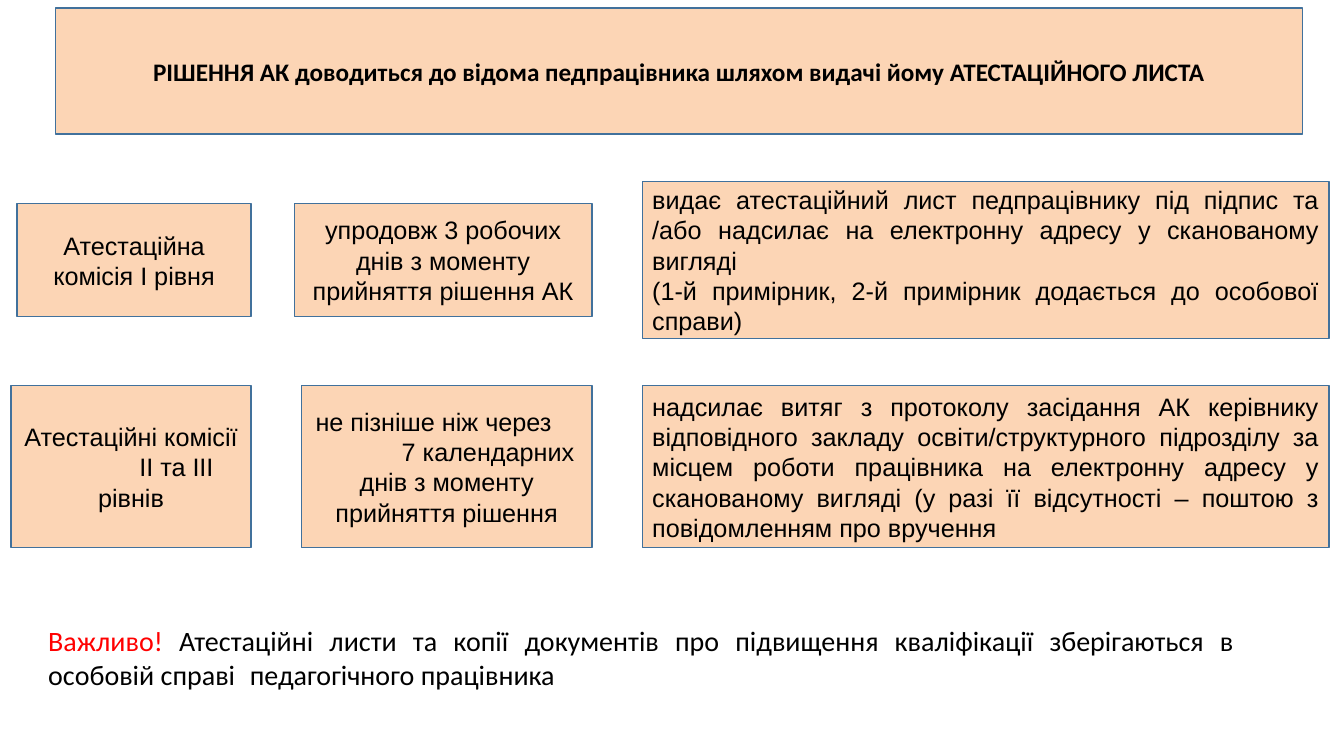
import pptx
import pptx.util
import pptx.dml.color
import pptx.enum.shapes
import pptx.enum.text

THEME = {
    "peach": "FCD5B5",
    "outline": "41719C",
    "white": "FFFFFF",
    "black": "000000",
    "red": "FF0000",
    "body_font": "Arial",
    "accent_font": "Calibri",
    "body_size": 18,
    "note_size": 20,
}
CENTER = pptx.enum.text.PP_ALIGN.CENTER
JUSTIFY = pptx.enum.text.PP_ALIGN.JUSTIFY

presentation = pptx.Presentation()
presentation.slide_width = pptx.util.Inches(13.33)
presentation.slide_height = pptx.util.Inches(7.5)
slide = presentation.slides.add_slide(presentation.slide_layouts[6])


def add_box(left, top, width, height, fill="peach", line="outline"):
    shape = slide.shapes.add_shape(
        pptx.enum.shapes.MSO_SHAPE.RECTANGLE,
        *[pptx.util.Inches(length) for length in (left, top, width, height)],
    )
    shape.shadow.inherit = False
    shape.fill.solid()
    shape.fill.fore_color.rgb = pptx.dml.color.RGBColor.from_string(THEME[fill])
    shape.line.color.rgb = pptx.dml.color.RGBColor.from_string(THEME[line])
    shape.line.width = pptx.util.Pt(1)
    shape.text_frame.word_wrap = True
    shape.text_frame.vertical_anchor = pptx.enum.text.MSO_ANCHOR.MIDDLE
    return shape


def add_run(paragraph, text, font="body_font", size="body_size", color="black", bold=False):
    run = paragraph.add_run()
    run.text = text
    run.font.name = THEME[font]
    run.font.size = pptx.util.Pt(THEME[size])
    run.font.bold = bold
    run.font.color.rgb = pptx.dml.color.RGBColor.from_string(THEME[color])


title = add_box(0.55, 0.08, 12.37, 1.25)
title_paragraph = title.text_frame.paragraphs[0]
title_paragraph.alignment = CENTER
add_run(
    title_paragraph,
    "РІШЕННЯ АК доводиться до відома педпрацівника шляхом видачі йому АТЕСТАЦІЙНОГО ЛИСТА",
    font="accent_font",
    bold=True,
)

column_rights = [2.49, 5.87, 13.18]
column_alignments = [CENTER, CENTER, JUSTIFY]

# Each line is (text, left indent, right indent); each cell is (width, height, lines).
rows = [
    (2.58, [
        (2.32, 1.12, [("Атестаційна комісія І рівня", 0, 0)]),
        (2.95, 1.12, [("упродовж 3 робочих днів з моменту прийняття рішення АК", 0, 0)]),
        (6.81, 1.56, [
            ("видає атестаційний лист педпрацівнику під підпис та /або надсилає "
             "на електронну адресу у сканованому вигляді", 0, 0),
            ("(1-й примірник, 2-й примірник додається до особової справи)", 0, 0),
        ]),
    ]),
    (4.63, [
        (2.38, 1.61, [
            ("Атестаційні комісії", 0, 0),
            ("ІІ та ІІІ", 0.9, 0),
            ("рівнів", 0, 0),
        ]),
        (2.88, 1.61, [
            ("не пізніше ніж через", 0, 0.26),
            ("7 календарних", 0.82, 0),
            ("днів з моменту прийняття рішення", 0, 0),
        ]),
        (6.81, 1.61, [
            ("надсилає витяг з протоколу засідання АК керівнику відповідного закладу "
             "освіти/структурного підрозділу за місцем роботи працівника на електронну "
             "адресу у сканованому вигляді (у разі її відсутності – поштою з "
             "повідомленням про вручення", 0, 0),
        ]),
    ]),
]

for middle, cells in rows:
    for right, alignment, (width, height, lines) in zip(column_rights, column_alignments, cells):
        box = add_box(right - width, middle - height / 2, width, height)
        for index, (text, left_indent, right_indent) in enumerate(lines):
            frame = box.text_frame
            paragraph = frame.add_paragraph() if index else frame.paragraphs[0]
            paragraph.alignment = alignment
            properties = paragraph._p.get_or_add_pPr()
            properties.set("marL", str(pptx.util.Inches(left_indent)))
            properties.set("marR", str(pptx.util.Inches(right_indent)))
            add_run(paragraph, text)

note = add_box(0.38, 6.05, 11.96, 0.94, fill="white", line="white")
note_paragraph = note.text_frame.paragraphs[0]
note_paragraph.alignment = JUSTIFY
for text, color in [
    ("Важливо!", "red"),
    (" Атестаційні листи та копії документів про підвищення кваліфікації зберігаються "
     "в особовій справі \tпедагогічного працівника", "black"),
]:
    add_run(note_paragraph, text, font="accent_font", size="note_size", color=color)

presentation.save("out.pptx")
